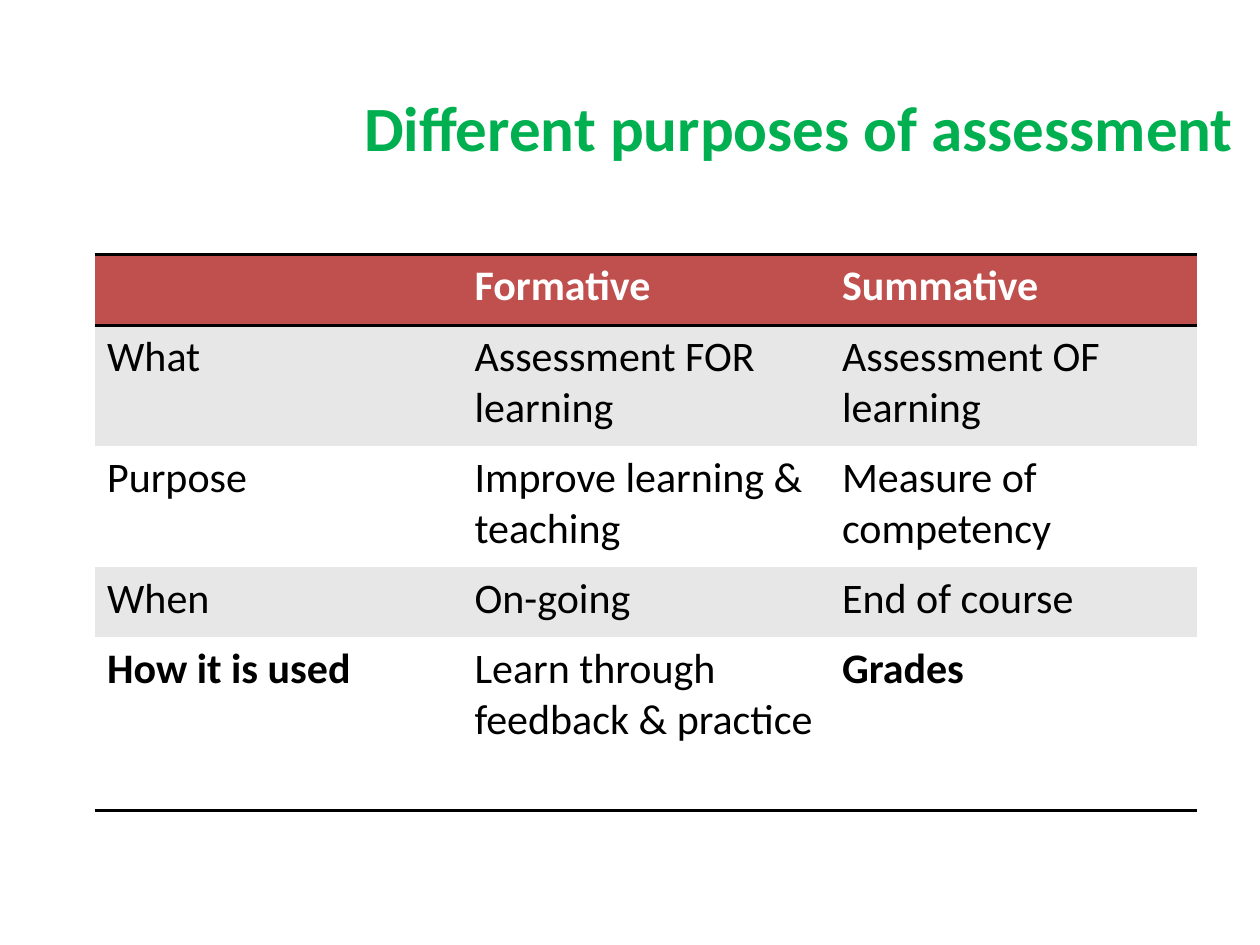
from lxml import etree
from pptx import Presentation
from pptx.dml.color import RGBColor
from pptx.enum import text
from pptx.oxml import ns
from pptx.util import Inches, Pt

TITLE = "Different purposes of assessment"
ROWS = [
    ("", "Formative", "Summative"),
    ("What", "Assessment FOR learning", "Assessment OF learning"),
    ("Purpose", "Improve learning & teaching", "Measure of competency"),
    ("When", "On-going", "End of course"),
    ("How it is used", "Learn through feedback & practice", "Grades"),
]
BOLD_TEXTS = {"How it is used", "Grades"}
ROW_HEIGHTS = [0.56, 0.96, 0.96, 0.56, 1.37]
TABLE_LEFT, TABLE_TOP, TABLE_WIDTH = 0.75, 2.02, 8.75
HEADER_FILL, BAND_FILL, PLAIN_FILL = "C0504D", "E7E7E7", "FFFFFF"
NO_STYLE = "{2D5ABB26-0587-4C30-8999-92F81FD0307C}"


def color(hex_value):
    return RGBColor.from_string(hex_value)


def add_run(paragraph, words, size, hex_value, bold):
    run = paragraph.add_run()
    run.text = words
    run.font.name = "Calibri"
    run.font.size = Pt(size)
    run.font.bold = bold
    run.font.color.rgb = color(hex_value)


def add_border(cell, side):
    """Draw a 2 pt black line on side "T" or "B"; call before filling the cell."""
    properties = cell._tc.get_or_add_tcPr()
    line = etree.SubElement(properties, ns.qn(f"a:ln{side}"), w=str(Pt(2)))
    fill = etree.SubElement(line, ns.qn("a:solidFill"))
    etree.SubElement(fill, ns.qn("a:srgbClr"), val="000000")


def add_title(slide):
    title = slide.shapes.title
    title.left, title.top = Inches(2.72), Inches(0.3)
    title.width, title.height = Inches(7.24), Inches(1.4)
    title.text_frame.vertical_anchor = text.MSO_ANCHOR.MIDDLE
    paragraph = title.text_frame.paragraphs[0]
    paragraph.alignment = text.PP_ALIGN.CENTER
    add_run(paragraph, TITLE, 36, "00B050", True)


def add_comparison_table(slide):
    table = slide.shapes.add_table(
        len(ROWS), len(ROWS[0]), Inches(TABLE_LEFT), Inches(TABLE_TOP),
        Inches(TABLE_WIDTH), Inches(sum(ROW_HEIGHTS))).table
    table._tbl.tblPr.find(ns.qn("a:tableStyleId")).text = NO_STYLE
    for row, height in zip(table.rows, ROW_HEIGHTS):
        row.height = Inches(height)

    for row_index, row_texts in enumerate(ROWS):
        is_header = row_index == 0
        if is_header:
            fill, sides = HEADER_FILL, "TB"
        else:
            fill = BAND_FILL if row_index % 2 else PLAIN_FILL
            sides = "B" if row_index == len(ROWS) - 1 else ""
        for column_index, words in enumerate(row_texts):
            cell = table.cell(row_index, column_index)
            for side in sides:
                add_border(cell, side)
            cell.fill.solid()
            cell.fill.fore_color.rgb = color(fill)
            if words:
                add_run(cell.text_frame.paragraphs[0], words, 24,
                        "FFFFFF" if is_header else "000000",
                        is_header or words in BOLD_TEXTS)


def main():
    presentation = Presentation()
    presentation.slide_width, presentation.slide_height = Inches(10), Inches(7.5)
    slide = presentation.slides.add_slide(presentation.slide_layouts[5])
    add_title(slide)
    add_comparison_table(slide)
    presentation.save("out.pptx")


if __name__ == "__main__":
    main()
